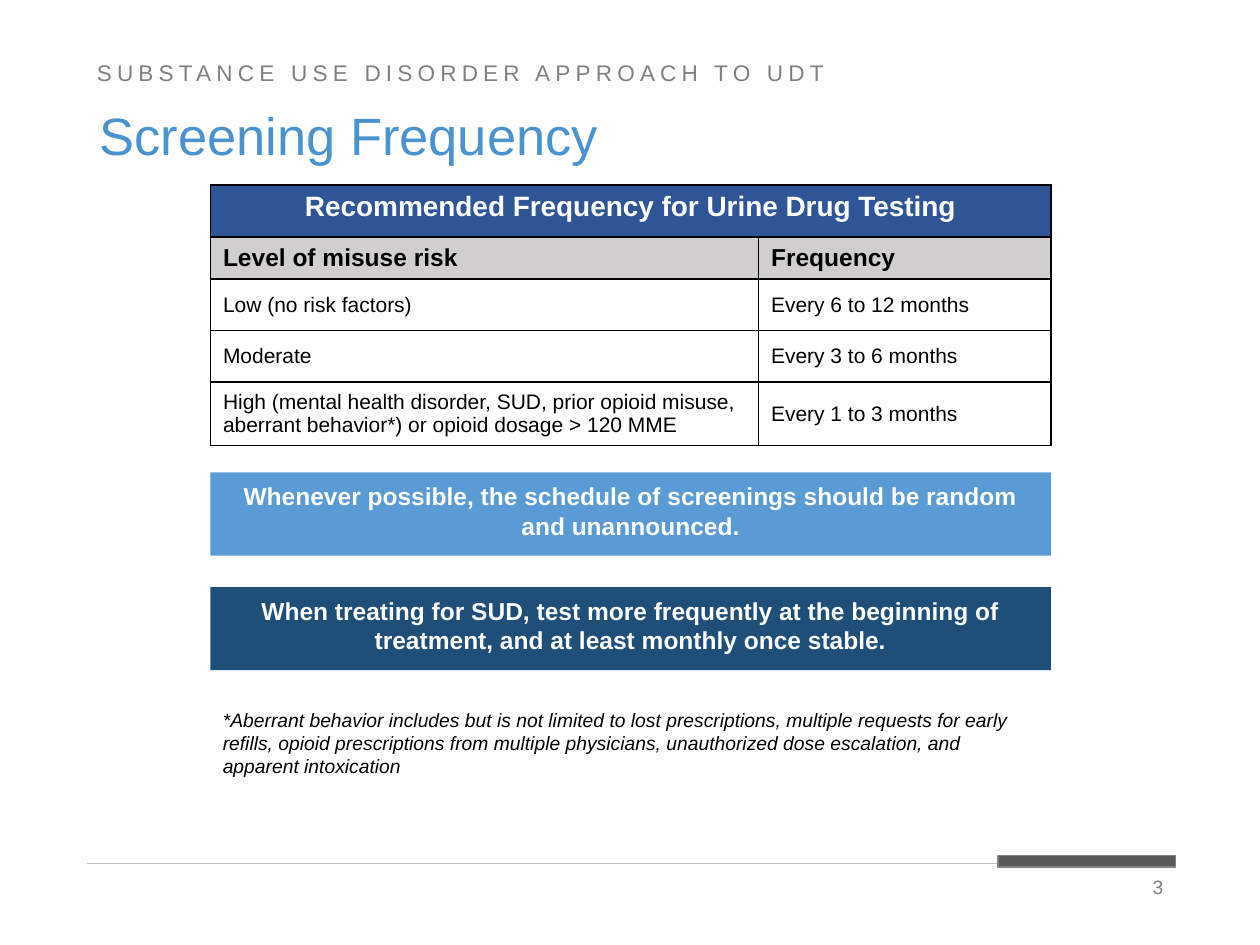
from lxml import etree
from pptx import Presentation
from pptx.dml.color import RGBColor
from pptx.enum.shapes import MSO_CONNECTOR as Connector, MSO_SHAPE as Shape
from pptx.enum.text import MSO_ANCHOR as Anchor, PP_ALIGN as Align
from pptx.oxml.ns import qn
from pptx.util import Inches, Pt

WHITE = RGBColor(0xFF, 0xFF, 0xFF)
BLACK = RGBColor(0, 0, 0)
GRAY = RGBColor(0x80, 0x80, 0x80)
RULE_GRAY = RGBColor(0xBF, 0xBF, 0xBF)
DARK_GRAY = RGBColor(0x59, 0x59, 0x59)
HEADER_GRAY = RGBColor(0xD0, 0xCE, 0xCE)
TITLE_BLUE = RGBColor(0x4B, 0x93, 0xCE)
TABLE_BLUE = RGBColor(0x2F, 0x55, 0x97)
LIGHT_BLUE = RGBColor(0x5B, 0x9B, 0xD5)
NAVY = RGBColor(0x1F, 0x4E, 0x79)

CONTENT_LEFT, CONTENT_WIDTH = 1.67, 6.67
COLUMN_WIDTHS = (4.35, 2.32)
ROW_HEIGHTS = (0.41, 0.25, 0.41, 0.41, 0.41)
TABLE_TITLE = "Recommended Frequency for Urine Drug Testing"
TABLE_ROWS = [
    ("Level of misuse risk", "Frequency"),
    ("Low (no risk factors)", "Every 6 to 12 months"),
    ("Moderate", "Every 3 to 6 months"),
    ("High (mental health disorder, SUD, prior opioid misuse, "
     "aberrant behavior*) or opioid dosage > 120 MME", "Every 1 to 3 months"),
]
CALLOUTS = [
    ("Whenever possible, the schedule of screenings should be random "
     "and unannounced.", LIGHT_BLUE),
    ("When treating for SUD, test more frequently at the beginning of "
     "treatment, and at least monthly once stable.", NAVY),
]
FOOTNOTE = ("*Aberrant behavior includes but is not limited to lost prescriptions, "
            "multiple requests for early refills, opioid prescriptions from multiple "
            "physicians, unauthorized dose escalation, and apparent intoxication")


def write(frame, text, size, color, bold=False, italic=False, align=Align.LEFT):
    """Fill the first paragraph of a text frame and return its run."""
    para = frame.paragraphs[0]
    para.alignment = align
    span = para.add_run()
    span.text = text
    font = span.font
    font.name, font.size, font.bold, font.italic = "Arial", Pt(size), bold, italic
    font.color.rgb = color
    return span


def add_text(page, box, text, size, color, anchor=Anchor.MIDDLE, **style):
    frame = page.shapes.add_textbox(*map(Inches, box)).text_frame
    frame.word_wrap = True
    frame.vertical_anchor = anchor
    write(frame, text, size, color, **style)
    return frame


def add_bar(page, box, fill):
    bar = page.shapes.add_shape(Shape.RECTANGLE, *map(Inches, box))
    bar.shadow.inherit = False
    bar.fill.solid()
    bar.fill.fore_color.rgb = fill
    bar.line.fill.background()
    return bar


def add_heading(page, left, top, width):
    title = add_text(page, (left, top + 0.31, width, 0.64), "Screening Frequency",
                     30, TITLE_BLUE)
    title.paragraphs[0].line_spacing = 0.9
    kicker = add_text(page, (left - 0.02, top, width, 0.26),
                      "SUBSTANCE USE DISORDER APPROACH TO UDT", 12.9, GRAY)
    para = kicker.paragraphs[0]
    para.line_spacing = 0.7
    para.runs[0].font._element.set("spc", "300")


def add_borders(cell):
    properties = cell._tc.get_or_add_tcPr()
    for index, side in enumerate(("lnL", "lnR", "lnT", "lnB")):
        line = etree.Element(qn(f"a:{side}"), w=str(Pt(1)))
        fill = etree.SubElement(line, qn("a:solidFill"))
        etree.SubElement(fill, qn("a:srgbClr"), val=str(BLACK))
        properties.insert(index, line)


def fill_cell(cell, text, size, color, fill, **style):
    cell.vertical_anchor = Anchor.MIDDLE
    cell.fill.solid()
    cell.fill.fore_color.rgb = fill
    write(cell.text_frame, text, size, color, **style)


def add_frequency_table(page, left, top, width):
    table = page.shapes.add_table(
        len(ROW_HEIGHTS), len(COLUMN_WIDTHS), Inches(left), Inches(top),
        Inches(width), Inches(sum(ROW_HEIGHTS))).table
    for column, column_width in zip(table.columns, COLUMN_WIDTHS):
        column.width = Inches(column_width)
    for row, height in zip(table.rows, ROW_HEIGHTS):
        row.height = Inches(height)

    banner = table.cell(0, 0)
    banner.merge(table.cell(0, 1))
    fill_cell(banner, TABLE_TITLE, 16, WHITE, TABLE_BLUE, bold=True, align=Align.CENTER)
    banner.vertical_anchor = Anchor.TOP
    for row, texts in enumerate(TABLE_ROWS, start=1):
        header = row == 1
        for column, text in enumerate(texts):
            fill_cell(table.cell(row, column), text, 14 if header else 12, BLACK,
                      HEADER_GRAY if header else WHITE, bold=header)
    for cell in table.iter_cells():
        add_borders(cell)


def add_callouts(page, left, top, width, height=0.66, pitch=0.91):
    for index, (text, fill) in enumerate(CALLOUTS):
        bar = add_bar(page, (left, top + index * pitch, width, height), fill)
        frame = bar.text_frame
        frame.word_wrap = True
        frame.vertical_anchor = Anchor.MIDDLE
        frame.margin_bottom = Inches(0.1)
        write(frame, text, 14, WHITE, bold=True, align=Align.CENTER)


def add_footer(page, left, top, width):
    right = left + width
    rule = page.shapes.add_connector(
        Connector.STRAIGHT, Inches(left), Inches(top), Inches(right), Inches(top))
    rule.line.color.rgb = RULE_GRAY
    rule.line.width = Pt(0.5)
    etree.SubElement(rule._element.spPr, qn("a:effectLst"))
    accent = add_bar(page, (right - 1.41, top - 0.06, 1.41, 0.09), DARK_GRAY)
    accent.line.color.rgb = GRAY
    accent.line.width = Pt(1)
    add_text(page, (right - 0.39, top + 0.05, 0.39, 0.27), "3", 11, GRAY,
             align=Align.RIGHT)


def main():
    deck = Presentation()
    deck.slide_width, deck.slide_height = Inches(10), Inches(7.5)
    page = deck.slides.add_slide(deck.slide_layouts[6])
    add_footer(page, 0.69, 6.85, 8.64)
    add_heading(page, 0.69, 0.47, 8.62)
    add_frequency_table(page, CONTENT_LEFT, 1.47, CONTENT_WIDTH)
    add_callouts(page, CONTENT_LEFT, 3.75, CONTENT_WIDTH)
    add_text(page, (CONTENT_LEFT, 5.57, CONTENT_WIDTH, 0.66), FOOTNOTE, 11, BLACK,
             anchor=Anchor.TOP, italic=True)
    deck.save("out.pptx")


if __name__ == "__main__":
    main()
